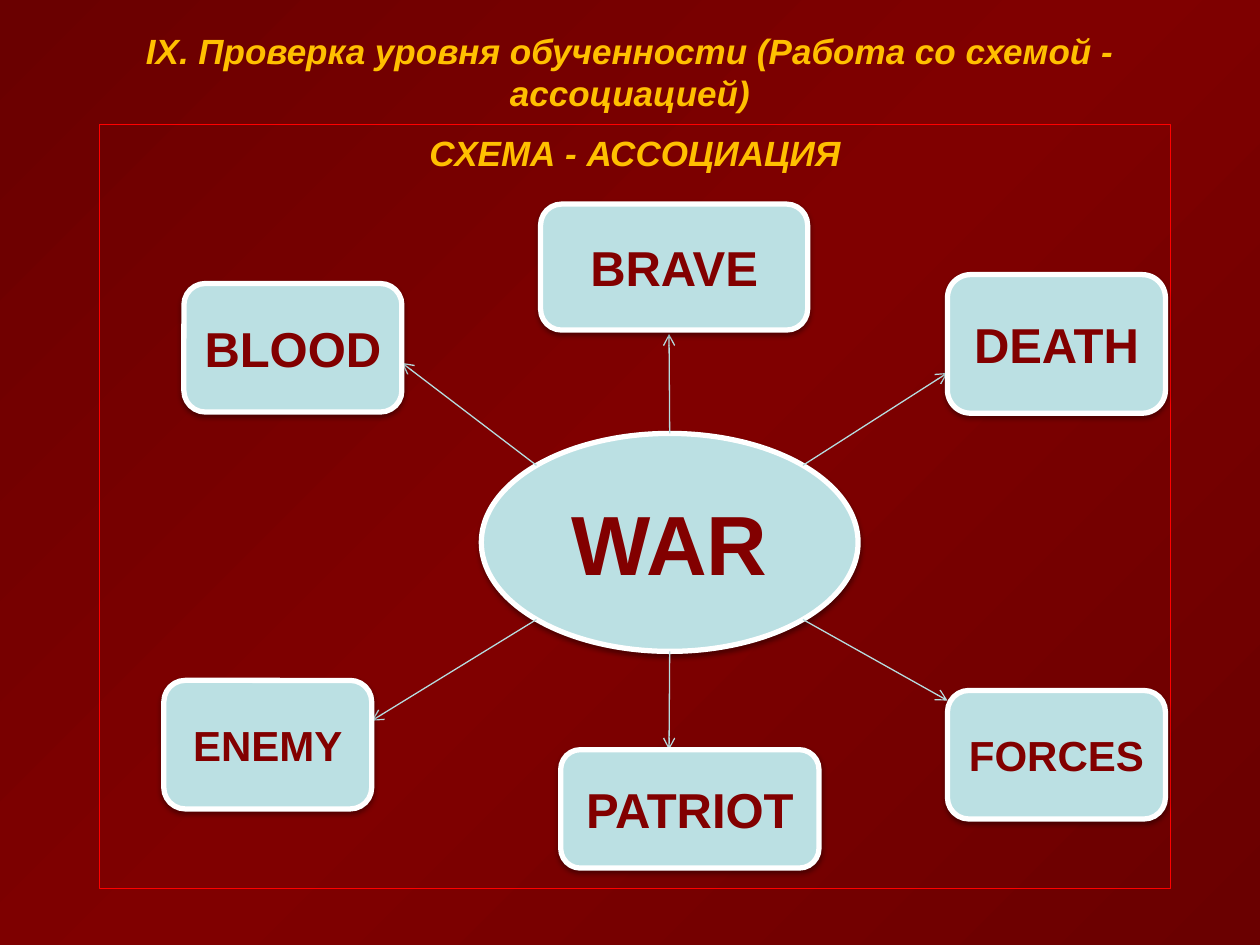
from copy import deepcopy
from dataclasses import dataclass
from math import cos, radians, sin

from lxml.etree import SubElement
from pptx import Presentation
from pptx.dml.color import RGBColor
from pptx.enum.shapes import MSO_CONNECTOR, MSO_SHAPE
from pptx.enum.text import MSO_ANCHOR, PP_ALIGN
from pptx.oxml.ns import qn
from pptx.util import Emu, Inches, Pt


@dataclass(frozen=True)
class Theme:
    font: str = "Arial"
    edge: str = "6A0000"
    middle: str = "800000"
    gold: str = "FFC000"
    frame: str = "FF0000"
    fill: str = "BBE0E3"
    outline: str = "FFFFFF"
    word: str = "820000"
    arrow: str = "B6DCDF"
    heading: int = 20
    small: int = 24
    normal: int = 28
    large: int = 48
    thin: float = 0.75
    thick: float = 3


@dataclass(frozen=True)
class Box:
    """A place on the grid, in columns and rows."""
    left: float
    top: float
    width: float
    height: float


@dataclass(frozen=True)
class Association:
    """A word around the hub; angle is where its arrow leaves the hub."""
    word: str
    box: Box
    size: int
    angle: int
    tip: tuple[float, float]


T = Theme()
WIDTH, HEIGHT = Inches(10), Inches(7.5)
COLUMNS, ROWS = 100, 75

FRAME = Box(7.9, 9.9, 85, 60.6)
HEADING = Box(7.5, 2.1, 85, 11)
HUB = Box(38.2, 34.4, 29.9, 17.3)
ASSOCIATIONS = [
    Association("BRAVE", Box(42.9, 16.2, 21.2, 10), T.normal, 270, (53.1, 26.5)),
    Association("DEATH", Box(75.2, 21.8, 17.3, 11), T.normal, 315, (75.2, 29.6)),
    Association("BLOOD", Box(14.6, 22.5, 17.3, 10.2), T.normal, 225, (31.9, 28.8)),
    Association("ENEMY", Box(13, 54, 16.5, 10.2), T.small, 135, (29.5, 57.2)),
    Association("PATRIOT", Box(44.5, 59.5, 20.5, 9.4), T.normal, 90, (53.1, 59.5)),
    Association("FORCES", Box(75.2, 54.8, 17.3, 10.2), T.small, 45, (75.2, 55.6)),
]


def x(columns: float) -> Emu:
    return Emu(round(WIDTH * columns / COLUMNS))


def y(rows: float) -> Emu:
    return Emu(round(HEIGHT * rows / ROWS))


def place(box: Box) -> tuple[Emu, Emu, Emu, Emu]:
    return x(box.left), y(box.top), x(box.width), y(box.height)


def color(value: str) -> RGBColor:
    return RGBColor.from_string(value)


def write(sp, text: str, size: int, ink: str, anchor, italic: bool = False) -> None:
    tf = sp.text_frame
    tf.text = text
    tf.word_wrap = True
    tf.vertical_anchor = anchor
    p = tf.paragraphs[0]
    p.alignment = PP_ALIGN.CENTER
    font = p.runs[0].font
    font.name, font.size = T.font, Pt(size)
    font.bold, font.italic = True, italic
    font.color.rgb = color(ink)


def set_line(line, ink: str, width: float) -> None:
    line.color.rgb = color(ink)
    line.width = Pt(width)


def add_shadow(sp) -> None:
    effects = SubElement(sp.element.spPr, qn("a:effectLst"))
    shadow = SubElement(effects, qn("a:outerShdw"), blurRad=str(Pt(3.1)),
                        dist=str(Pt(1.6)), dir="5400000", rotWithShape="0")
    ink = SubElement(shadow, qn("a:srgbClr"), val="000000")
    SubElement(ink, qn("a:alpha"), val="38000")


def add_node(s, kind, box: Box, text: str, size: int) -> None:
    sp = s.shapes.add_shape(kind, *place(box))
    sp.fill.solid()
    sp.fill.fore_color.rgb = color(T.fill)
    set_line(sp.line, T.outline, T.thick)
    add_shadow(sp)
    write(sp, text, size, T.word, MSO_ANCHOR.MIDDLE)


def add_arrow(s, angle: int, tip: tuple[float, float]) -> None:
    rx, ry = HUB.width / 2, HUB.height / 2
    start_x = HUB.left + rx + rx * cos(radians(angle))
    start_y = HUB.top + ry + ry * sin(radians(angle))
    line = s.shapes.add_connector(MSO_CONNECTOR.STRAIGHT, x(start_x), y(start_y),
                                  x(tip[0]), y(tip[1]))
    set_line(line.line, T.arrow, T.thin)
    SubElement(line.line._get_or_add_ln(), qn("a:tailEnd"), type="arrow")
    SubElement(line.element.spPr, qn("a:effectLst"))


def paint_background(s) -> None:
    fill = s.background.fill
    fill.gradient()
    fill.gradient_angle = 315
    stops = s.element.find(".//" + qn("a:gsLst"))
    stops.insert(1, deepcopy(stops[0]))
    shades = zip(fill.gradient_stops, (0, 0.5, 1), (T.edge, T.middle, T.edge))
    for stop, position, shade in shades:
        stop.position = position
        stop.color.rgb = color(shade)


def main() -> None:
    prs = Presentation()
    prs.slide_width, prs.slide_height = WIDTH, HEIGHT
    s = prs.slides.add_slide(prs.slide_layouts[5])
    paint_background(s)

    # Framed title
    title = s.shapes.title
    title.left, title.top, title.width, title.height = place(FRAME)
    set_line(title.line, T.frame, T.thin)
    write(title, "СХЕМА - АССОЦИАЦИЯ", T.heading, T.gold, MSO_ANCHOR.TOP, italic=True)

    # Heading above the frame
    heading = s.shapes.add_textbox(*place(HEADING))
    write(heading, "IX. Проверка уровня обученности (Работа со схемой - ассоциацией)",
          T.heading, T.gold, MSO_ANCHOR.BOTTOM, italic=True)
    heading.text_frame.margin_bottom = y(4.1)

    # Hub, arrows and associated words
    add_node(s, MSO_SHAPE.OVAL, HUB, "WAR", T.large)
    for item in ASSOCIATIONS:
        add_arrow(s, item.angle, item.tip)
    for item in ASSOCIATIONS:
        add_node(s, MSO_SHAPE.ROUNDED_RECTANGLE, item.box, item.word, item.size)

    prs.save("out.pptx")


if __name__ == "__main__":
    main()
